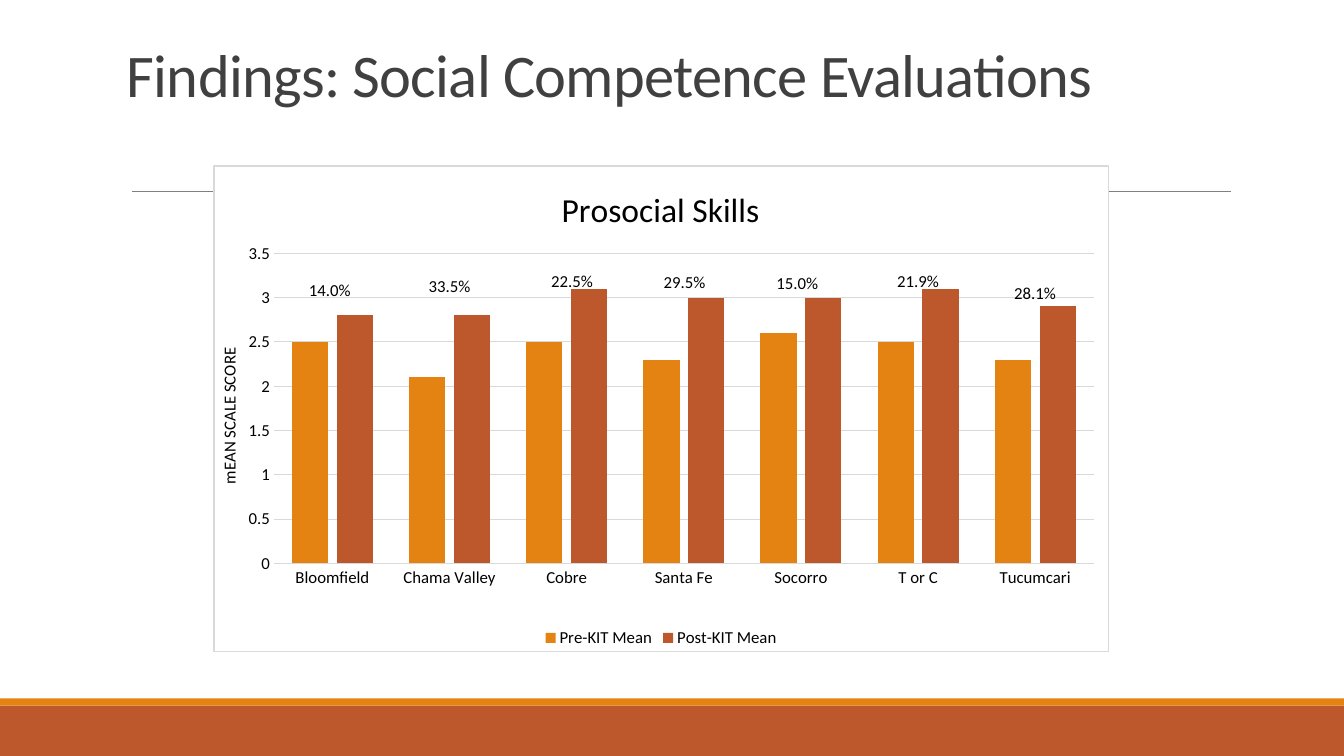
from lxml.etree import SubElement
from pptx import Presentation
from pptx.chart.data import CategoryChartData
from pptx.dml.color import RGBColor
from pptx.enum.chart import XL_CHART_TYPE as CT, XL_LABEL_POSITION as LP
from pptx.enum.chart import XL_LEGEND_POSITION as LEG, XL_TICK_MARK as TM
from pptx.enum.shapes import MSO_CONNECTOR as MC, MSO_SHAPE as MS
from pptx.enum.text import MSO_ANCHOR as MA, MSO_AUTO_SIZE as AS, PP_ALIGN as PA
from pptx.oxml import parse_xml
from pptx.oxml.ns import nsdecls, qn
from pptx.util import Cm, Pt

W, H = 33.87, 19.05
FONT = "Calibri"
ORANGE, RUST, GRID, BLACK = "E48312", "BD582C", "D9D9D9", "000000"
SCORES = [
    ("Bloomfield", 2.5, 2.8, "14.0%", 2.2, -7.6),
    ("Chama Valley", 2.1, 2.8, "33.5%", 2.5, -15.7),
    ("Cobre", 2.5, 3.1, "22.5%", 3.1, -9.5),
    ("Santa Fe", 2.3, 3, "29.5%", 2.6, -13),
    ("Socorro", 2.6, 3, "15.0%", 2.1, -7.2),
    ("T or C", 2.5, 3.1, "21.9%", 2.5, -9.6),
    ("Tucumcari", 2.3, 2.9, "28.1%", 2.5, -10.7),
]


def rgb(color):
    return RGBColor.from_string(color)


def style(font, size, color=BLACK):
    font.name, font.size, font.bold = FONT, Pt(size), False
    font.color.rgb = rgb(color)


def add_run(p, text, size, color=BLACK):
    r = p.add_run()
    r.text = text
    style(r.font, size, color)
    return r


def set_layout(el, index, x, y, w=None, h=None):
    for old in el.findall(qn("c:layout")):
        el.remove(old)
    layout = parse_xml(f"<c:layout {nsdecls('c')}/>")
    el.insert(index, layout)
    manual = SubElement(layout, qn("c:manualLayout"))
    parts = [("x", x), ("y", y)]
    if w is not None:
        SubElement(manual, qn("c:layoutTarget")).set("val", "inner")
        parts += [("w", w), ("h", h)]
    if el.tag != qn("c:dLbl"):
        for name in ("xMode", "yMode"):
            SubElement(manual, qn(f"c:{name}")).set("val", "edge")
    for name, value in parts:
        SubElement(manual, qn(f"c:{name}")).set("val", f"{value / 100:.3f}")


def add_footer(s, x, y, w, h):
    strip = 0.18
    for top, height, color in ((y + strip, h - strip, RUST), (y, strip, ORANGE)):
        sp = s.shapes.add_shape(MS.RECTANGLE, Cm(x), Cm(top), Cm(w), Cm(height))
        sp.shadow.inherit = False
        sp.fill.solid()
        sp.fill.fore_color.rgb = rgb(color)
        sp.line.fill.background()


def add_rule(s, x, y, w):
    ln = s.shapes.add_connector(MC.STRAIGHT, Cm(x), Cm(y), Cm(x + w), Cm(y))
    ln.line.color.rgb = rgb("808080")
    ln.line.width = Pt(0.5)
    SubElement(ln._element.spPr, qn("a:effectLst"))


def add_title(s, x, y, w, h):
    sp = s.shapes.title
    sp.left, sp.top, sp.width, sp.height = Cm(x), Cm(y), Cm(w), Cm(h)
    tf = sp.text_frame
    tf.word_wrap, tf.auto_size = True, AS.NONE
    tf.vertical_anchor = MA.BOTTOM
    p = tf.paragraphs[0]
    p.alignment, p.line_spacing = PA.LEFT, 0.85
    r = add_run(p, "Findings: Social Competence Evaluations", 43.2, "404040")
    r.font._element.set("spc", "-50")


def add_chart_title(title, text, size, x, y):
    add_run(title.text_frame.paragraphs[0], text, size)
    set_layout(title._element, 1, x, y)


def style_axes(chart):
    cat, val = chart.category_axis, chart.value_axis
    for axis in (cat, val):
        axis.major_tick_mark = axis.minor_tick_mark = TM.NONE
        style(axis.tick_labels.font, 12)
    val.minimum_scale, val.maximum_scale, val.major_unit = 0, 3.5, 0.5
    val.tick_labels.number_format = "General"
    val.tick_labels.number_format_is_linked = False
    val.format.line.fill.background()
    val.has_major_gridlines = True
    for line in (cat.format.line, val.major_gridlines.format.line):
        line.color.rgb = rgb(GRID)
        line.width = Pt(0.75)
    add_chart_title(val.axis_title, "mEAN SCALE SCORE", 12, 0.1, 36.8)


def add_gains(series):
    for i, (*_, gain, dx, dy) in enumerate(SCORES):
        label = series.points[i].data_label
        add_run(label.text_frame.paragraphs[0], gain, 12)
        label.position = LP.OUTSIDE_END
        set_layout(label._get_or_add_dLbl(), 1, dx, dy)
    for leader in series._element.iter(qn("c:showLeaderLines")):
        leader.set("val", "0")


def add_scores(s, x, y, w, h):
    data = CategoryChartData()
    data.categories = [row[0] for row in SCORES]
    data.add_series("Pre-KIT Mean", [row[1] for row in SCORES])
    data.add_series("Post-KIT Mean", [row[2] for row in SCORES])
    chart = s.shapes.add_chart(
        CT.COLUMN_CLUSTERED, Cm(x), Cm(y), Cm(w), Cm(h), data).chart
    style(chart.font, 10)
    chart.has_title = True
    add_chart_title(chart.chart_title, "Prosocial Skills", 24, 38.2, 3.1)
    style_axes(chart)

    plot = chart.plots[0]
    plot.gap_width, plot.overlap, plot.vary_by_categories = 100, -24, False
    for series, color in zip(plot.series, (ORANGE, RUST)):
        series.format.fill.solid()
        series.format.fill.fore_color.rgb = rgb(color)
    add_gains(plot.series[0])

    chart.has_legend = True
    chart.legend.position = LEG.BOTTOM
    chart.legend.include_in_layout = False
    style(chart.legend.font, 12)

    body = chart._chartSpace.find(qn("c:chart"))
    set_layout(body.find(qn("c:plotArea")), 0, 6.7, 18, 91.7, 63.8)
    body.addnext(parse_xml(
        f'<c:spPr {nsdecls("c", "a")}>'
        '<a:solidFill><a:srgbClr val="FFFFFF"/></a:solidFill>'
        f'<a:ln w="{Pt(0.75)}"><a:solidFill><a:srgbClr val="{GRID}"/>'
        '</a:solidFill></a:ln></c:spPr>'))


def main():
    prs = Presentation()
    prs.slide_width, prs.slide_height = Cm(W), Cm(H)
    s = prs.slides.add_slide(prs.slide_layouts[5])
    add_footer(s, 0, H - 1.45, W, 1.45)
    add_rule(s, 3.33, 4.83, 27.68)
    add_title(s, 2.94, 1.09, 27.94, 1.8)
    add_scores(s, 5.38, 4.17, 22.56, 12.27)
    prs.save("out.pptx")


if __name__ == "__main__":
    main()
